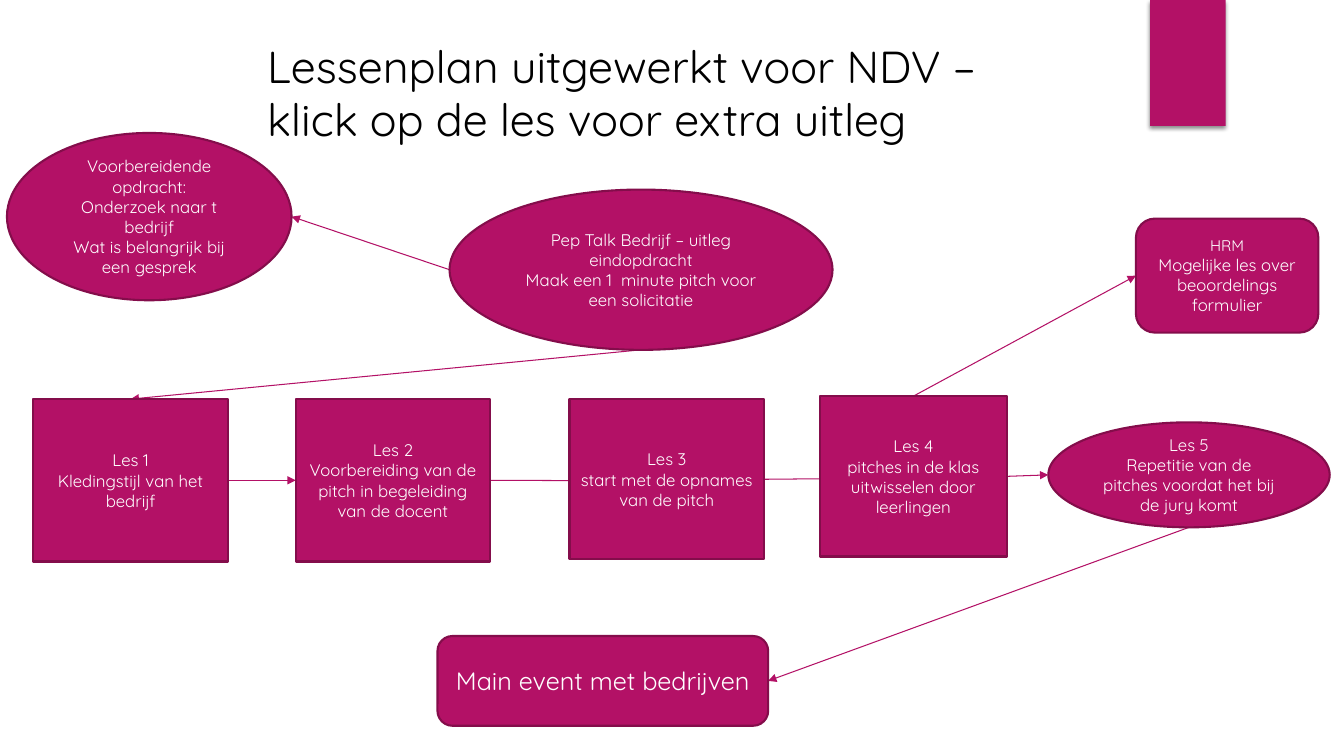
from dataclasses import dataclass
from enum import IntEnum
from typing import Optional

from lxml.etree import SubElement
from pptx import Presentation
from pptx.dml.color import RGBColor
from pptx.enum.shapes import MSO_CONNECTOR, MSO_SHAPE
from pptx.enum.text import MSO_ANCHOR, MSO_AUTO_SIZE, PP_ALIGN
from pptx.oxml.ns import qn
from pptx.shapes.autoshape import Shape
from pptx.shapes.connector import Connector
from pptx.slide import Slide
from pptx.text.text import _Paragraph as Paragraph
from pptx.util import Pt


@dataclass(frozen=True)
class Theme:
    font: str = "Quicksand"
    magenta: RGBColor = RGBColor(0xB3, 0x11, 0x66)
    outline: RGBColor = RGBColor(0x84, 0x0D, 0x4B)
    white: RGBColor = RGBColor(0xFF, 0xFF, 0xFF)
    black: RGBColor = RGBColor(0, 0, 0)
    title: float = 32
    event: float = 18
    step: float = 12
    small: float = 11
    outline_width: float = 1.5
    link_width: float = 0.75


THEME = Theme()


class Side(IntEnum):
    TOP = 0
    LEFT = 1
    BOTTOM = 2
    RIGHT = 3


@dataclass(frozen=True)
class Step:
    kind: MSO_SHAPE
    left: float
    top: float
    width: float
    height: float
    lines: tuple[str, ...]
    size: float = THEME.step
    first_size: Optional[float] = None

    def side(self, side: Side) -> tuple[float, float]:
        across, down = {
            Side.TOP: (0.5, 0),
            Side.LEFT: (0, 0.5),
            Side.BOTTOM: (0.5, 1),
            Side.RIGHT: (1, 0.5),
        }[side]
        return self.left + across * self.width, self.top + down * self.height


@dataclass(frozen=True)
class Link:
    start: str
    start_side: Side
    end: Optional[str] = None
    end_side: Side = Side.LEFT
    end_point: tuple[float, float] = (0, 0)


RECT, OVAL, ROUND = MSO_SHAPE.RECTANGLE, MSO_SHAPE.OVAL, MSO_SHAPE.ROUNDED_RECTANGLE

TITLE = "Lessenplan uitgewerkt voor NDV – klick op de les voor extra uitleg"

STEPS = {
    "talk": Step(OVAL, 321.1, 135.4, 273.6, 114.5, (
        "Pep Talk Bedrijf – uitleg eindopdracht",
        "Maak een 1  minute pitch voor een solicitatie")),
    "preparation": Step(OVAL, 5, 95, 203.3, 119.5, (
        "Voorbereidende opdracht:",
        "Onderzoek naar t bedrijf",
        "Wat is belangrijk bij een gesprek")),
    "lesson 1": Step(RECT, 23.8, 285.1, 139, 116, (
        "Les 1", "Kledingstijl van het bedrijf")),
    "lesson 2": Step(RECT, 211.2, 285.1, 139, 116, (
        "Les 2", "Voorbereiding van de pitch in begeleiding van de docent")),
    "lesson 3": Step(RECT, 406.8, 285.1, 139, 114.5, (
        "Les 3", "start met de opnames van de pitch")),
    "lesson 4": Step(RECT, 585.4, 283, 134, 114.5, (
        "Les 4", "pitches in de klas uitwisselen door leerlingen")),
    "lesson 5": Step(OVAL, 748.8, 301.7, 201, 75, (
        "Les 5", "Repetitie van de pitches voordat het bij de jury komt")),
    "hrm": Step(ROUND, 811.4, 156.2, 130.3, 81.4, (
        "HRM", "Mogelijke les over beoordelings formulier"),
        first_size=THEME.small),
    "event": Step(ROUND, 312.5, 454.3, 236.2, 64.1, (
        "Main event met bedrijven",), THEME.event),
}

LINKS = (
    Link("talk", Side.LEFT, "preparation", Side.RIGHT),
    Link("talk", Side.BOTTOM, "lesson 1", Side.TOP),
    Link("lesson 1", Side.RIGHT, "lesson 2"),
    Link("lesson 2", Side.RIGHT, end_point=(439.2, 343.4)),
    Link("lesson 3", Side.RIGHT, end_point=(662.4, 341.3)),
    Link("lesson 4", Side.RIGHT, "lesson 5"),
    Link("lesson 4", Side.TOP, "hrm"),
    Link("lesson 5", Side.BOTTOM, "event", Side.RIGHT),
)


def format_paragraph(paragraph: Paragraph, size: float, color: RGBColor,
                     alignment: PP_ALIGN) -> None:
    paragraph.alignment = alignment
    for name, value in {"name": THEME.font, "size": Pt(size)}.items():
        setattr(paragraph.font, name, value)
    paragraph.font.color.rgb = color


def draw_title(slide: Slide) -> None:
    title = slide.shapes.title
    bounds = {"left": 183.6, "top": 23.8, "width": 556.6, "height": 85}
    for name, value in bounds.items():
        setattr(title, name, Pt(value))
    title.text_frame.text = TITLE
    frame_format = {"word_wrap": True, "vertical_anchor": MSO_ANCHOR.TOP,
                    "auto_size": MSO_AUTO_SIZE.SHAPE_TO_FIT_TEXT}
    for name, value in frame_format.items():
        setattr(title.text_frame, name, value)
    format_paragraph(title.text_frame.paragraphs[0], THEME.title, THEME.black,
                     PP_ALIGN.LEFT)


def draw_ribbon(slide: Slide) -> None:
    ribbon = slide.shapes.add_shape(RECT, Pt(821.5), Pt(0), Pt(54), Pt(90))
    ribbon.fill.solid()
    ribbon.fill.fore_color.rgb = THEME.magenta
    ribbon.line.fill.background()
    ribbon.shadow.inherit = False
    effects = ribbon._element.spPr.find(qn("a:effectLst"))
    shadow = SubElement(effects, qn("a:outerShdw"), blurRad=str(Pt(3)),
                        dist=str(Pt(2)), dir="5400000", rotWithShape="0")
    shade = SubElement(shadow, qn("a:srgbClr"), val=str(THEME.black))
    SubElement(shade, qn("a:alpha"), val="45000")


def draw_link(slide: Slide, link: Link) -> Connector:
    start = STEPS[link.start].side(link.start_side)
    end = STEPS[link.end].side(link.end_side) if link.end else link.end_point
    arrow = slide.shapes.add_connector(
        MSO_CONNECTOR.STRAIGHT, *(Pt(value) for value in (*start, *end)))
    arrow.line.color.rgb = THEME.magenta
    arrow.line.width = Pt(THEME.link_width)
    SubElement(arrow.line._get_or_add_ln(), qn("a:tailEnd"), type="triangle")
    SubElement(arrow._element.spPr, qn("a:effectLst"))
    return arrow


def draw_step(slide: Slide, step: Step) -> Shape:
    bounds = (step.left, step.top, step.width, step.height)
    box = slide.shapes.add_shape(step.kind, *(Pt(value) for value in bounds))
    box.shadow.inherit = False
    box.fill.solid()
    box.fill.fore_color.rgb = THEME.magenta
    box.line.color.rgb = THEME.outline
    box.line.width = Pt(THEME.outline_width)
    frame = box.text_frame
    frame.text = "\n".join(step.lines)
    frame.word_wrap = True
    frame.vertical_anchor = MSO_ANCHOR.MIDDLE
    for index, paragraph in enumerate(frame.paragraphs):
        size = step.first_size if index == 0 and step.first_size else step.size
        format_paragraph(paragraph, size, THEME.white, PP_ALIGN.CENTER)
    return box


def join_link(arrow: Connector, link: Link, boxes: dict[str, Shape]) -> None:
    if STEPS[link.start].kind != OVAL:
        arrow.begin_connect(boxes[link.start], int(link.start_side))
    if link.end and STEPS[link.end].kind != OVAL:
        arrow.end_connect(boxes[link.end], int(link.end_side))


def main() -> None:
    presentation = Presentation()
    presentation.slide_width, presentation.slide_height = Pt(960), Pt(540)
    slide = presentation.slides.add_slide(presentation.slide_layouts[5])
    draw_title(slide)
    draw_ribbon(slide)
    arrows = [draw_link(slide, link) for link in LINKS]
    boxes = {name: draw_step(slide, step) for name, step in STEPS.items()}
    for arrow, link in zip(arrows, LINKS):
        join_link(arrow, link, boxes)
    presentation.save("out.pptx")


if __name__ == "__main__":
    main()
